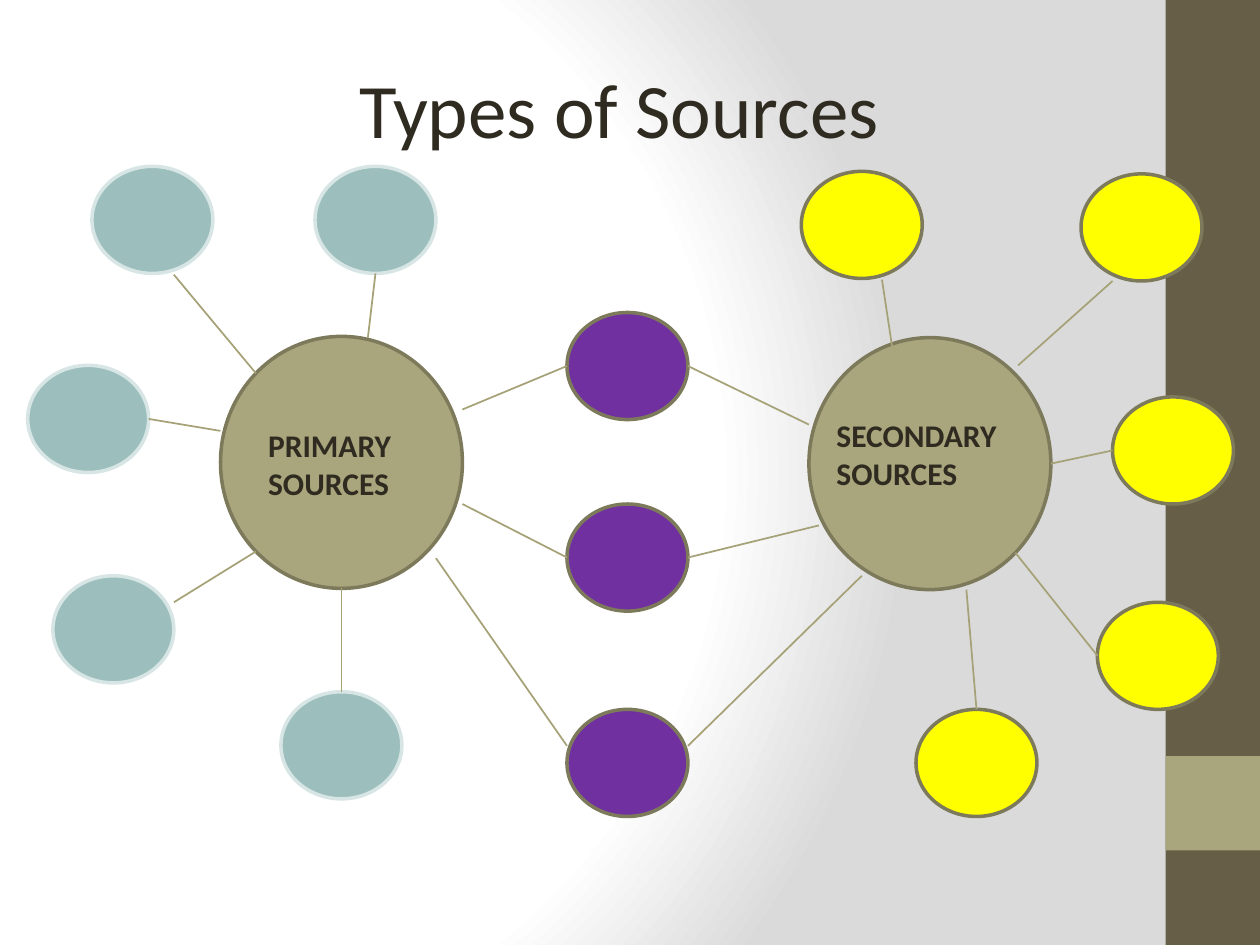
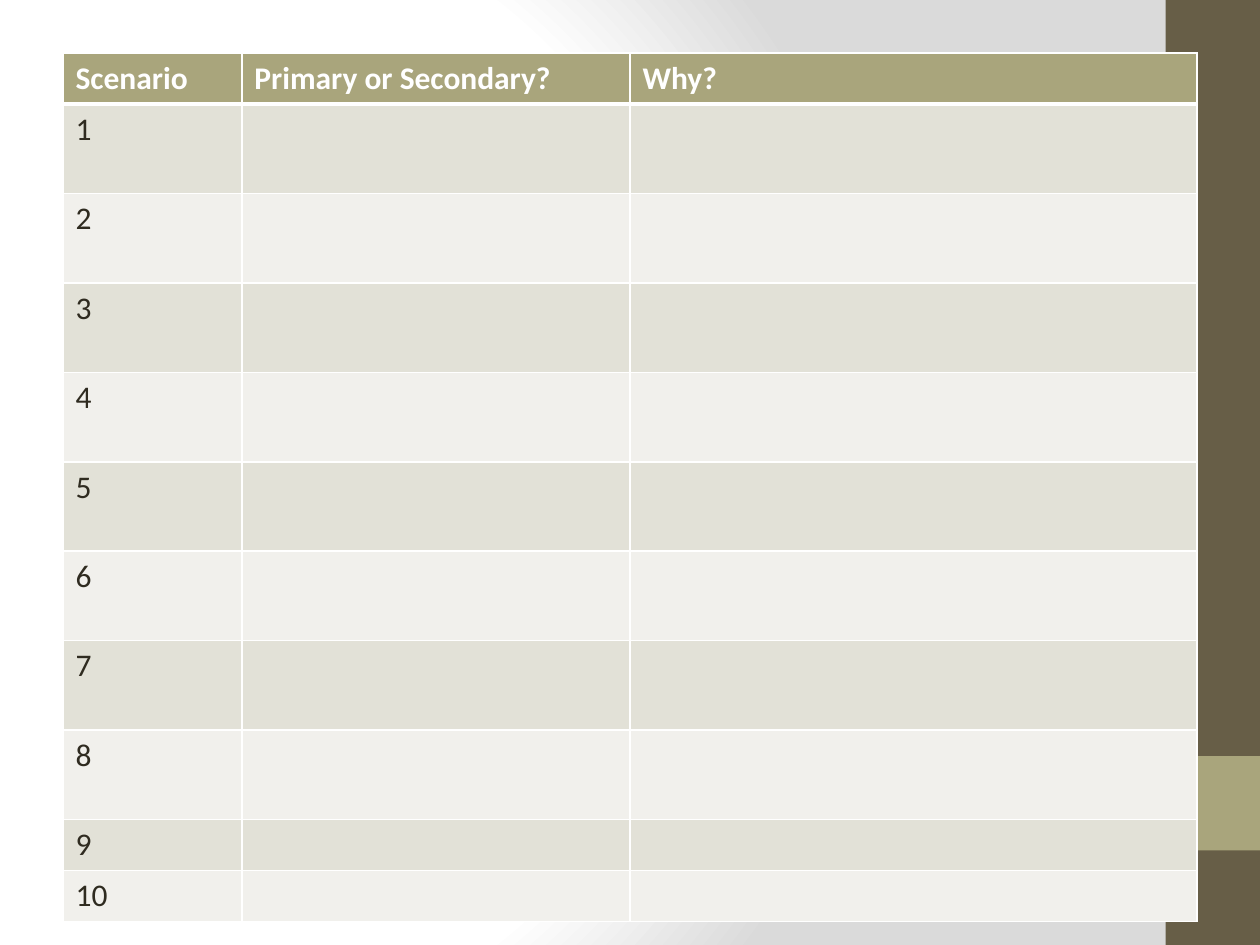
"""Build two slides on primary and secondary sources."""
import math

import pptx
import pptx.dml.color
import pptx.enum.shapes
import pptx.enum.text
import pptx.oxml
import pptx.oxml.ns
import pptx.util

Inches = pptx.util.Inches
SHAPES = pptx.enum.shapes.MSO_SHAPE
ALIGN = pptx.enum.text.PP_ALIGN

FONT = "Calibri"
INK = "2F2B20"
BROWN = "675E47"
KHAKI = "A9A57C"
OUTLINE = "7D7A5C"
LINK = "A6A278"
TEAL = "9CBEBD"
PALE_TEAL = "D7E5E5"
YELLOW = "FFFF00"
PURPLE = "7030A0"
WHITE = "FFFFFF"
BODY_BANDS = ("E2E1D7", "F1F0EC")

TOP, TOP_LEFT, LEFT, BOTTOM_LEFT, BOTTOM, BOTTOM_RIGHT, RIGHT = range(7)

HUB_SIZE = (1.92, 2)
BUBBLE_SIZE = (0.96, 0.85)
PRIMARY_BUBBLES = [(2.5, 1.32), (0.73, 1.32), (0.22, 2.9), (0.42, 4.57), (2.23, 5.49)]
SECONDARY_BUBBLES = [(6.36, 1.36), (8.58, 1.38), (8.83, 3.15), (8.71, 4.78), (7.27, 5.63)]
SHARED_BUBBLES = [(4.5, 2.48), (4.5, 4), (4.5, 5.63)]


def color(value):
    """Return the colour for a hex string."""
    return pptx.dml.color.RGBColor.from_string(value)


def write_text(frame, text, size=18, fill=INK, bold=False, align=ALIGN.LEFT):
    """Write one formatted paragraph into a text frame."""
    frame.word_wrap = True
    paragraph = frame.paragraphs[0]
    paragraph.alignment = align
    run = paragraph.add_run()
    run.text = text
    run.font.name = FONT
    run.font.size = pptx.util.Pt(size)
    run.font.bold = bold
    run.font.color.rgb = color(fill)


def add_text(slide, text, left, top, width, height, **text_format):
    """Add a text box holding one paragraph."""
    box = slide.shapes.add_textbox(*map(Inches, (left, top, width, height)))
    write_text(box.text_frame, text, **text_format)


def add_filled_shape(slide, kind, left, top, width, height, fill, outline=None):
    """Add a preset shape with a flat fill and an optional outline."""
    shape = slide.shapes.add_shape(kind, *map(Inches, (left, top, width, height)))
    shape.shadow.inherit = False
    shape.fill.solid()
    shape.fill.fore_color.rgb = color(fill)
    if outline:
        shape.line.color.rgb = color(outline)
        shape.line.width = pptx.util.Pt(2)
    else:
        shape.line.fill.background()
    return shape


def add_bubbles(slide, places, size, fill, outline=OUTLINE):
    """Add equal ellipses at the given places."""
    return [add_filled_shape(slide, SHAPES.OVAL, *place, *size, fill, outline)
            for place in places]


def locate(end):
    """Return the position of a free point or of an ellipse's connection site."""
    first, second = end
    if isinstance(first, (int, float)):
        return Inches(first), Inches(second)
    angle = math.radians(90 + 45 * second)
    return (round(first.left + first.width / 2 * (1 + math.cos(angle))),
            round(first.top + first.height / 2 * (1 - math.sin(angle))))


def add_link(slide, start, end):
    """Draw a straight connector, joined to every ellipse it names."""
    connector = slide.shapes.add_connector(
        pptx.enum.shapes.MSO_CONNECTOR.STRAIGHT, *locate(start), *locate(end))
    connector.line.color.rgb = color(LINK)
    connector.line.width = pptx.util.Pt(1)
    properties = connector.element.spPr
    properties.append(pptx.oxml.parse_xml(
        f'<a:effectLst {pptx.oxml.ns.nsdecls("a")}/>'))
    joints = connector.element.nvCxnSpPr.cNvCxnSpPr
    for (shape, site), get_joint in ((start, joints.get_or_add_stCxn),
                                     (end, joints.get_or_add_endCxn)):
        if not isinstance(shape, (int, float)):
            joint = get_joint()
            joint.id, joint.idx = shape.shape_id, site


def set_background(master):
    """Give the slide master its radial white to grey background."""
    master.background.fill.gradient()
    gradient = master.element.find(".//" + pptx.oxml.ns.qn("a:gradFill"))
    stops = "".join(f'<a:gs pos="{place}000"><a:srgbClr val="{value}"/></a:gs>'
                    for place, value in ((0, WHITE), (75, WHITE), (100, "DADADA")))
    gradient.getparent().replace(gradient, pptx.oxml.parse_xml(
        f'<a:gradFill {pptx.oxml.ns.nsdecls("a")} rotWithShape="1">'
        f'<a:gsLst>{stops}</a:gsLst><a:path path="circle">'
        '<a:fillToRect l="20000" t="50000" r="100000" b="50000"/></a:path></a:gradFill>'))


def add_banded_slide(presentation):
    """Add a blank slide with the side band and its accent square."""
    slide = presentation.slides.add_slide(presentation.slide_layouts[6])
    add_filled_shape(slide, SHAPES.RECTANGLE, 9.25, 0, 0.75, 7.5, BROWN)
    add_filled_shape(slide, SHAPES.RECTANGLE, 9.25, 6, 0.75, 0.75, KHAKI)
    return slide


def set_borders(cell, top=1, bottom=1):
    """Draw white borders round a table cell, with widths in points."""
    properties = cell._tc.get_or_add_tcPr()
    widths = {"lnL": 1, "lnR": 1, "lnT": top, "lnB": bottom}
    for position, (side, width) in enumerate(widths.items()):
        properties.insert(position, pptx.oxml.parse_xml(
            f'<a:{side} {pptx.oxml.ns.nsdecls("a")} w="{pptx.util.Pt(width)}">'
            f'<a:solidFill><a:srgbClr val="{WHITE}"/></a:solidFill></a:{side}>'))


def add_scenario_table(slide, rows, widths, heights):
    """Add the banded table with a khaki heading row."""
    frame = slide.shapes.add_table(len(rows), len(widths), Inches(0.5), Inches(0.42),
                                   Inches(sum(widths)), Inches(sum(heights)))
    table = frame.table
    for column, width in zip(table.columns, widths):
        column.width = Inches(width)
    for index, (texts, height) in enumerate(zip(rows, heights)):
        heading = index == 0
        table.rows[index].height = Inches(height)
        for column, text in enumerate(texts):
            cell = table.cell(index, column)
            cell.fill.solid()
            cell.fill.fore_color.rgb = color(KHAKI if heading else BODY_BANDS[(index - 1) % 2])
            set_borders(cell, top=3 if index == 1 else 1, bottom=3 if heading else 1)
            if text:
                write_text(cell.text_frame, text, bold=heading,
                           fill=WHITE if heading else INK)


def build_sources_slide(presentation):
    """Build the web of primary, shared and secondary sources."""
    slide = add_banded_slide(presentation)
    add_text(slide, "Types of Sources", 0.33, 0.44, 9.17, 0.85, size=44, align=ALIGN.CENTER)
    primary, secondary = add_bubbles(slide, [(1.75, 2.67), (6.42, 2.68)], HUB_SIZE, KHAKI)
    teal = add_bubbles(slide, PRIMARY_BUBBLES, BUBBLE_SIZE, TEAL, PALE_TEAL)
    yellow = add_bubbles(slide, SECONDARY_BUBBLES, BUBBLE_SIZE, YELLOW)
    purple = add_bubbles(slide, SHARED_BUBBLES, BUBBLE_SIZE, PURPLE)
    links = [
        ((teal[0], BOTTOM), (2.92, 2.68)),
        ((1.38, 2.18), (primary, TOP_LEFT)),
        ((teal[2], RIGHT), (1.75, 3.42)),
        ((1.38, 4.78), (primary, BOTTOM_LEFT)),
        ((teal[4], TOP), (primary, BOTTOM)),
        ((purple[0], LEFT), (3.67, 3.25)),
        ((purple[1], LEFT), (3.67, 4)),
        ((4.5, 5.92), (3.46, 4.43)),
        ((purple[0], RIGHT), (6.42, 3.37)),
        ((purple[1], RIGHT), (6.5, 4.17)),
        ((5.46, 5.92), (6.84, 4.57)),
        ((7, 2.22), (7.08, 2.75)),
        ((8.83, 2.23), (8.08, 2.9)),
        ((yellow[2], LEFT), (secondary, RIGHT)),
        ((yellow[3], LEFT), (secondary, BOTTOM_RIGHT)),
        ((yellow[4], TOP), (7.67, 4.68)),
    ]
    for start, end in links:
        add_link(slide, start, end)
    add_text(slide, "PRIMARY SOURCES", 2.03, 3.33, 1.43, 0.71, bold=True)
    add_text(slide, "SECONDARY SOURCES", 6.54, 3.25, 1.56, 0.71, bold=True)


def build_scenarios_slide(presentation):
    """Build the worksheet of ten scenarios."""
    slide = add_banded_slide(presentation)
    rows = [("Scenario", "Primary or Secondary?", "Why?")]
    rows += [(str(number), "", "") for number in range(1, 11)]
    heights = [0.4] + [0.71] * 8 + [0.4] * 2
    add_scenario_table(slide, rows, (1.42, 3.08, 4.5), heights)


def main():
    """Build and save the presentation."""
    presentation = pptx.Presentation()
    presentation.slide_width = Inches(10)
    presentation.slide_height = Inches(7.5)
    set_background(presentation.slide_master)
    build_sources_slide(presentation)
    build_scenarios_slide(presentation)
    presentation.save("out.pptx")


if __name__ == "__main__":
    main()
